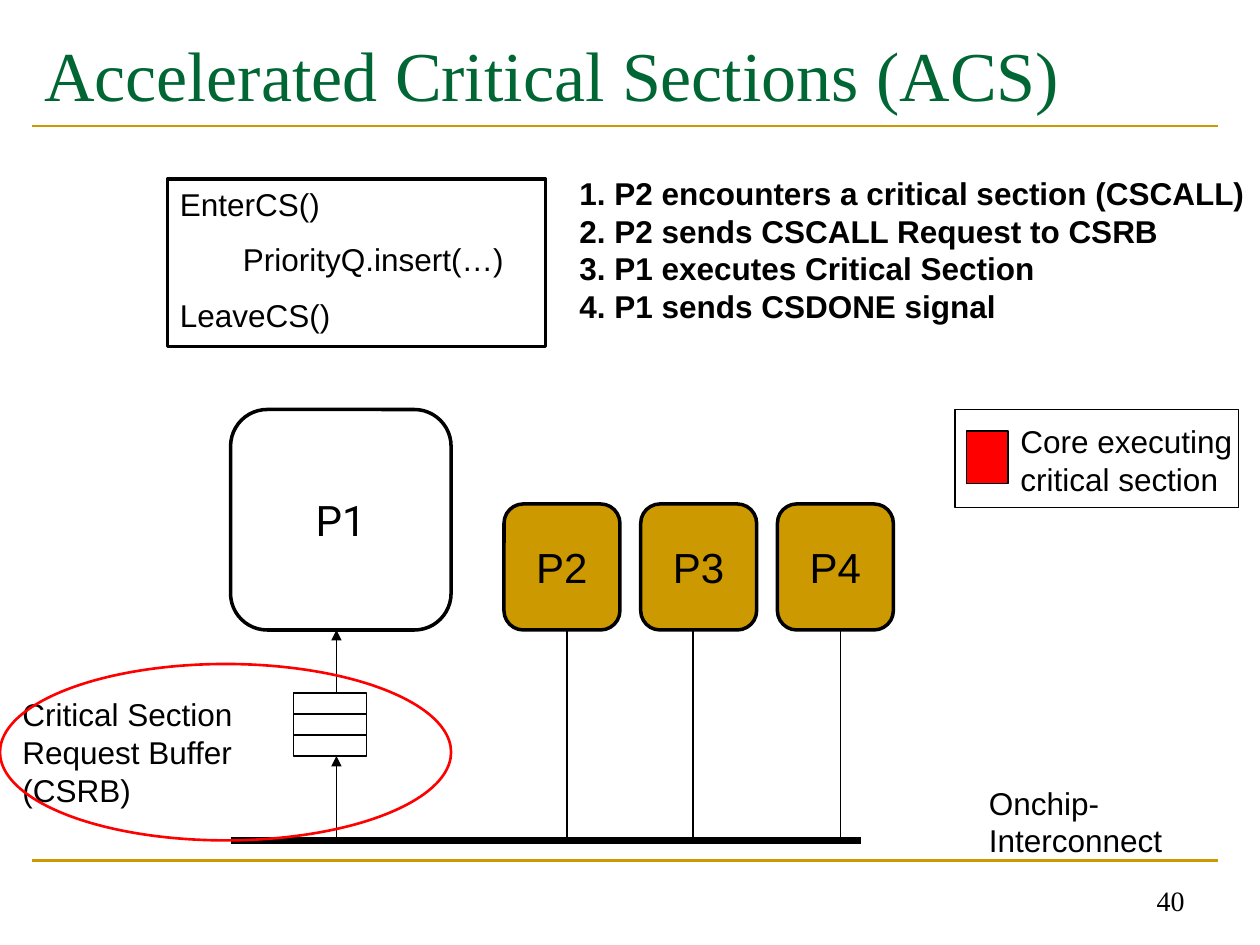
from lxml import etree
from pptx import Presentation
from pptx.dml.color import RGBColor
from pptx.enum.shapes import MSO_CONNECTOR, MSO_SHAPE
from pptx.enum.text import MSO_ANCHOR, PP_ALIGN
from pptx.oxml.ns import qn
from pptx.util import Inches, Pt

STRAIGHT = MSO_CONNECTOR.STRAIGHT
RECT, ROUNDED, OVAL = MSO_SHAPE.RECTANGLE, MSO_SHAPE.ROUNDED_RECTANGLE, MSO_SHAPE.OVAL
TOP, MIDDLE, BOTTOM = MSO_ANCHOR.TOP, MSO_ANCHOR.MIDDLE, MSO_ANCHOR.BOTTOM
LEFT, CENTER, RIGHT = PP_ALIGN.LEFT, PP_ALIGN.CENTER, PP_ALIGN.RIGHT

COLORS = {"black": "000000", "white": "FFFFFF", "green": "006633",
          "gold": "CC9900", "red": "FF0000"}

TITLE = "Accelerated Critical Sections (ACS)"
PAGE = "40"
CODE = ["EnterCS()", "PriorityQ.insert(…)", "LeaveCS()"]
STEPS = ["1. P2 encounters a critical section (CSCALL)",
         "2. P2 sends CSCALL Request to CSRB",
         "3. P1 executes Critical Section",
         "4. P1 sends CSDONE signal"]
LABELS = [
    ("Onchip-Interconnect", (7.75, 6.17, 2.25, 0.7)),
    ("Critical Section\vRequest Buffer (CSRB)", (0.08, 5.47, 2.08, 1)),
    ("Core executing critical section", (8, 3.3, 2, 0.7)),
]
SMALL_CORES = ["P2", "P3", "P4"]
CORE_LEFT, CORE_STEP = 4, 1.085
CORE_BOTTOM, BUS_Y = 5, 6.67
CORE_WIRES = [4.5, 5.5, 6.67]
QUEUE_X, QUEUE_TOP, QUEUE_BOTTOM, QUEUE_SLOTS = 2.67, 5.5, 6, 3


def rgb(name):
    return RGBColor.from_string(COLORS[name])


def write(tf, lines, size=18, font="Arial", color="black", bold=False,
          align=LEFT, anchor=TOP, gap=0):
    tf.vertical_anchor = anchor
    for i, line in enumerate(lines):
        p = tf.paragraphs[0] if i == 0 else tf.add_paragraph()
        p.alignment = align
        p.space_before = Pt(gap if i else 0)
        for j, part in enumerate(line.split("\v")):
            if j:
                p.add_line_break()
            r = p.add_run()
            r.text = part
            r.font.size = Pt(size)
            r.font.name = font
            r.font.bold = bold
            r.font.color.rgb = rgb(color)


def add_text(s, box, lines, wrap=True, **style):
    tf = s.shapes.add_textbox(*map(Inches, box)).text_frame
    tf.word_wrap = wrap
    write(tf, lines, **style)


def add_box(s, kind, box, fill=None, line="black", width=0.75):
    sp = s.shapes.add_shape(kind, *map(Inches, box))
    sp.shadow.inherit = False
    if fill:
        sp.fill.solid()
        sp.fill.fore_color.rgb = rgb(fill)
    else:
        sp.fill.background()
    sp.line.color.rgb = rgb(line)
    sp.line.width = Pt(width)
    return sp


def add_line(s, x1, y1, x2, y2, color="black", width=0.75, arrow=False):
    cx = s.shapes.add_connector(STRAIGHT, *map(Inches, (x1, y1, x2, y2)))
    cx.line.color.rgb = rgb(color)
    cx.line.width = Pt(width)
    if arrow:
        etree.SubElement(cx.line._get_or_add_ln(), qn("a:tailEnd"), type="triangle")
    etree.SubElement(cx._element.spPr, qn("a:effectLst"))


def add_core(s, name, box, fill, font="Arial"):
    sp = add_box(s, ROUNDED, box, fill, width=2)
    write(sp.text_frame, [name], size=24, font=font, align=CENTER, anchor=MIDDLE)


def main():
    prs = Presentation()
    prs.slide_width, prs.slide_height = Inches(10), Inches(7.5)
    s = prs.slides.add_slide(prs.slide_layouts[5])

    for y in (6.83, 1):
        add_line(s, 0.25, y, 9.67, y, "gold", 1.5)
    title = s.shapes.title
    title.left, title.top, title.width, title.height = map(Inches, (0.25, 0.17, 9.42, 0.83))
    write(title.text_frame, [TITLE], size=40, font="Times New Roman",
          color="green", anchor=MIDDLE)
    add_text(s, (7.17, 6.83, 2.33, 0.5), [PAGE], size=16, font="Times New Roman",
             align=RIGHT, anchor=BOTTOM)

    add_line(s, 1.83, BUS_Y, 6.83, BUS_Y, width=4)
    code = add_box(s, RECT, (1.33, 1.42, 3, 1.33), width=2)
    write(code.text_frame, CODE, gap=10)
    code.text_frame.paragraphs[1].level = 1
    code.text_frame.paragraphs[1]._p.get_or_add_pPr().set("marL", str(Inches(0.5)))
    add_text(s, (4.5, 1.33, 5.48, 1.3), STEPS, wrap=False, bold=True)

    slot = (QUEUE_BOTTOM - QUEUE_TOP) / QUEUE_SLOTS
    for i in range(QUEUE_SLOTS):
        add_box(s, RECT, (2.33, QUEUE_TOP + i * slot, 0.58, slot), "white")
    add_line(s, QUEUE_X, BUS_Y, QUEUE_X, QUEUE_BOTTOM, arrow=True)
    add_line(s, QUEUE_X, QUEUE_TOP, QUEUE_X, CORE_BOTTOM, arrow=True)
    for x in CORE_WIRES:
        add_line(s, x, CORE_BOTTOM, x, BUS_Y)

    add_box(s, RECT, (7.67, 3.42, 0.33, 0.42), "red")
    add_box(s, RECT, (7.58, 3.25, 2.25, 0.78))
    for text, box in LABELS:
        add_text(s, box, [text])

    for i, name in enumerate(SMALL_CORES):
        add_core(s, name, (CORE_LEFT + i * CORE_STEP, CORE_BOTTOM - 1, 0.92, 1), "gold")
    add_core(s, "P1", (1.83, CORE_BOTTOM - 1.75, 1.75, 1.75), "white", "Roboto")
    add_box(s, OVAL, (0, 5.27, 3.58, 1.4), line="red", width=1.5)

    prs.save("out.pptx")


if __name__ == "__main__":
    main()
